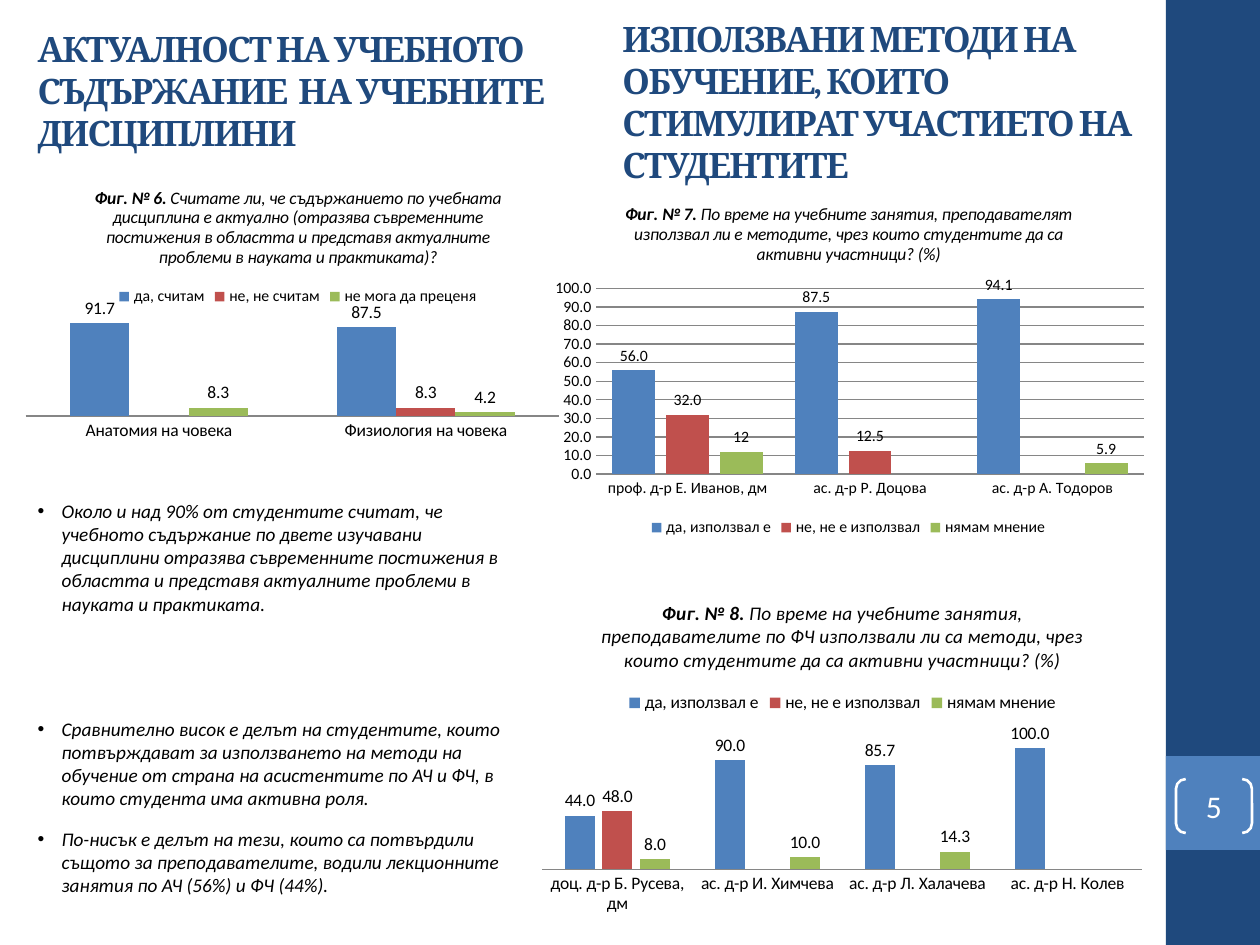
"""Build the survey slide with three column charts and the findings beside them."""
from typing import NamedTuple, Optional

from lxml import etree
from pptx import Presentation
from pptx.chart.data import CategoryChartData
from pptx.dml.color import RGBColor
from pptx.enum.chart import XL_CHART_TYPE, XL_LABEL_POSITION, XL_LEGEND_POSITION, XL_TICK_MARK
from pptx.enum.shapes import MSO_SHAPE
from pptx.enum.text import MSO_ANCHOR, MSO_AUTO_SIZE, PP_ALIGN
from pptx.oxml.ns import qn
from pptx.util import Emu, Pt

PX = 914400 / 126
NAVY = RGBColor(0x1F, 0x49, 0x7D)
BLUE = RGBColor(0x4F, 0x81, 0xBD)
RED = RGBColor(0xC0, 0x50, 0x4D)
GREEN = RGBColor(0x9B, 0xBB, 0x59)
GRAY = RGBColor(0x86, 0x86, 0x86)
BLACK = RGBColor(0, 0, 0)
WHITE = RGBColor(0xFF, 0xFF, 0xFF)
HEAD_FONT, BODY_FONT = "Cambria", "Calibri"
COLUMN = XL_CHART_TYPE.COLUMN_CLUSTERED
TOP, BOTTOM = XL_LEGEND_POSITION.TOP, XL_LEGEND_POSITION.BOTTOM
OUTSIDE = XL_LABEL_POSITION.OUTSIDE_END
NO_TICK = XL_TICK_MARK.NONE
MIDDLE, UPPER = MSO_ANCHOR.MIDDLE, MSO_ANCHOR.TOP
NO_FIT = MSO_AUTO_SIZE.NONE
LEFT, CENTER = PP_ALIGN.LEFT, PP_ALIGN.CENTER
RECT, BRACKETS = MSO_SHAPE.RECTANGLE, MSO_SHAPE.DOUBLE_BRACKET
GENERAL, DECIMAL = "General", "0.0;[Red]0.0"


class Box(NamedTuple):
    x: int
    y: int
    w: int
    h: int

    def emu(self) -> list[Emu]:
        return [Emu(round(v * PX)) for v in self]


class Series(NamedTuple):
    name: str
    values: list[Optional[float]]
    color: RGBColor
    fmt: str = DECIMAL


class Figure(NamedTuple):
    box: Box
    plot: tuple[float, float, float, float]
    label: str
    question: str
    title_size: int
    size: int
    legend: XL_LEGEND_POSITION
    legend_size: int
    gap: int
    overlap: int
    top: int
    scale: bool
    categories: list[str]
    series: list[Series]


FIGURES = [
    Figure(Box(20, 169, 556, 317), (0.01, 0.46, 0.96, 0.32), "Фиг. № 6.",
           " Считате ли, че съдържанието по учебната дисциплина е актуално (отразява "
           "съвременните постижения в областта и представя актуалните проблеми в "
           "науката и практиката)?",
           10, 10, TOP, 9, 150, 0, 100, False,
           ["Анатомия на човека", "Физиология на човека"],
           [Series("да, считам", [91.7, 87.5], BLUE, GENERAL),
            Series("не, не считам", [None, 8.3], RED, GENERAL),
            Series("не мога да преценя", [8.3, 4.2], GREEN, GENERAL)]),
    Figure(Box(530, 582, 625, 338), (0.02, 0.42, 0.96, 0.43), "Фиг. № 8.",
           " По време на учебните занятия, преподавателите по ФЧ използвали ли са "
           "методи, чрез които студентите да са активни участници? (%)",
           11, 10, TOP, 10, 150, -25, 120, False,
           ["доц. д-р Б. Русева, дм", "ас. д-р И. Химчева", "ас. д-р Л. Халачева",
            "ас. д-р Н. Колев"],
           [Series("да, използвал е", [44, 90, 85.7, 100], BLUE),
            Series("не, не е използвал", [48, None, None, None], RED),
            Series("нямам мнение", [8, 10, 14.3, None], GREEN)]),
    Figure(Box(541, 185, 615, 357), (0.09, 0.29, 0.89, 0.52), "Фиг. № 7.",
           " По време на учебните занятия, преподавателят използвал ли е методите, "
           "чрез които студентите да са активни участници? (%)",
           10, 9, BOTTOM, 9, 75, -25, 100, True,
           ["проф. д-р Е. Иванов, дм", "ас. д-р Р. Доцова", "ас. д-р А. Тодоров"],
           [Series("да, използвал е", [56, 87.5, 94.1], BLUE),
            Series("не, не е използвал", [32, 12.5, None], RED),
            Series("нямам мнение", [12, None, 5.9], GREEN, GENERAL)]),
]


def place(sp, box: Box) -> None:
    sp.left, sp.top, sp.width, sp.height = box.emu()


def add_run(p, text: str, size: int, color: RGBColor, font: str = BODY_FONT,
            bold: bool = False, italic: bool = False):
    r = p.add_run()
    r.text = text
    f = r.font
    f.size, f.name, f.bold, f.italic = Pt(size), font, bold, italic
    f.color.rgb = color
    return r


def fill_heading(sp, text: str) -> None:
    tf = sp.text_frame
    tf.word_wrap, tf.auto_size, tf.vertical_anchor = True, NO_FIT, MIDDLE
    p = tf.paragraphs[0]
    p.alignment = LEFT
    r = add_run(p, text, 20, NAVY, HEAD_FONT, bold=True)
    r.font.language_id = None
    r.font._element.set("spc", "-100")


def fill_list(sp, box: Box, items: list[str]) -> None:
    place(sp, box)
    tf = sp.text_frame
    tf.word_wrap, tf.auto_size, tf.vertical_anchor = True, NO_FIT, UPPER
    indent = round(24 * PX)
    for i, item in enumerate(items):
        p = tf.add_paragraph() if i else tf.paragraphs[0]
        p.space_before, p.space_after = Pt(0), Pt(10)
        pPr = p._p.get_or_add_pPr()
        pPr.set("marL", str(indent))
        pPr.set("indent", str(-indent))
        add_run(p, item, 11, BLACK, italic=True)


def add_block(slide, kind: MSO_SHAPE, box: Box, color: Optional[RGBColor]):
    sp = slide.shapes.add_shape(kind, *box.emu())
    sp.shadow.inherit = False
    if color is None:
        sp.fill.background()
    else:
        sp.fill.solid()
        sp.fill.fore_color.rgb = color
        sp.line.fill.background()
    return sp


def add_page_number(slide, box: Box, number: str) -> None:
    sp = add_block(slide, BRACKETS, box, None)
    sp.adjustments[0] = 0.18
    sp.line.color.rgb, sp.line.width = WHITE, Pt(1.5)
    tf = sp.text_frame
    tf.margin_left = tf.margin_right = tf.margin_top = tf.margin_bottom = 0
    tf.vertical_anchor = MIDDLE
    p = tf.paragraphs[0]
    p.alignment = CENTER
    add_run(p, number, 18, WHITE)


def set_plot_layout(chart, plot: tuple[float, float, float, float]) -> None:
    area = chart.element.find(".//" + qn("c:plotArea"))
    for old in area.findall(qn("c:layout")):
        area.remove(old)
    layout = etree.Element(qn("c:layout"))
    manual = etree.SubElement(layout, qn("c:manualLayout"))
    values = [("layoutTarget", "inner"), ("xMode", "edge"), ("yMode", "edge"),
              *zip("xywh", map(str, plot))]
    for tag, value in values:
        etree.SubElement(manual, qn(f"c:{tag}")).set("val", value)
    area.insert(0, layout)


def add_figure(slide, fig: Figure) -> None:
    data = CategoryChartData()
    data.categories = fig.categories
    for s in fig.series:
        data.add_series(s.name, s.values, s.fmt)
    chart = slide.shapes.add_chart(COLUMN, *fig.box.emu(), data).chart
    chart.font.size, chart.font.name = Pt(fig.size), BODY_FONT
    chart.font.color.rgb = BLACK
    chart.has_title = True
    p = chart.chart_title.text_frame.paragraphs[0]
    add_run(p, fig.label, fig.title_size, BLACK, bold=True, italic=True)
    add_run(p, fig.question, fig.title_size, BLACK, italic=True)
    chart.has_legend = True
    chart.legend.position, chart.legend.include_in_layout = fig.legend, False
    chart.legend.font.size = Pt(fig.legend_size)
    plot = chart.plots[0]
    plot.gap_width, plot.overlap, plot.vary_by_categories = fig.gap, fig.overlap, False
    for ser, s in zip(plot.series, fig.series):
        ser.format.fill.solid()
        ser.format.fill.fore_color.rgb = s.color
        labels = ser.data_labels
        labels.show_value, labels.position = True, OUTSIDE
        labels.number_format, labels.number_format_is_linked = s.fmt, False
    cat, val = chart.category_axis, chart.value_axis
    cat.major_tick_mark = val.major_tick_mark = NO_TICK
    cat.format.line.color.rgb = GRAY
    val.minimum_scale, val.maximum_scale = 0, fig.top
    val.visible = val.has_major_gridlines = fig.scale
    if fig.scale:
        val.major_unit = 10
        val.tick_labels.number_format, val.tick_labels.number_format_is_linked = DECIMAL, False
        val.format.line.fill.background()
        val.major_gridlines.format.line.color.rgb = GRAY
    set_plot_layout(chart, fig.plot)


def main() -> None:
    prs = Presentation()
    prs.slide_width, prs.slide_height = Box(0, 0, 1260, 945).emu()[2:]
    slide = prs.slides.add_slide(prs.slide_layouts[3])
    title, first, second = slide.placeholders
    add_block(slide, RECT, Box(1166, 0, 94, 945), NAVY)
    add_block(slide, RECT, Box(1166, 756, 94, 94), BLUE)
    add_page_number(slide, Box(1176, 779, 76, 54), "5")
    place(title, Box(25, 26, 536, 129))
    fill_heading(title, "АКТУАЛНОСТ НА УЧЕБНОТО СЪДЪРЖАНИЕ  НА УЧЕБНИТЕ ДИСЦИПЛИНИ")
    fill_heading(slide.shapes.add_textbox(*Box(610, 37, 536, 129).emu()),
                 "ИЗПОЛЗВАНИ МЕТОДИ НА ОБУЧЕНИЕ, КОИТО  СТИМУЛИРАТ УЧАСТИЕТО НА СТУДЕНТИТЕ")
    fill_list(first, Box(25, 493, 496, 149), [
        "Около и над 90% от студентите считат, че учебното съдържание по двете изучавани "
        "дисциплини отразява съвременните постижения в областта и представя актуалните "
        "проблеми в науката и практиката."])
    fill_list(second, Box(25, 711, 496, 218), [
        "Сравнително висок е делът на студентите, които потвърждават за използването на "
        "методи на обучение от страна на асистентите по АЧ и ФЧ, в които студента има "
        "активна роля.",
        "По-нисък е делът на тези, които са потвърдили същото за преподавателите, водили "
        "лекционните занятия по АЧ (56%) и ФЧ (44%)."])
    for fig in FIGURES:
        add_figure(slide, fig)
    prs.save("out.pptx")


if __name__ == "__main__":
    main()
